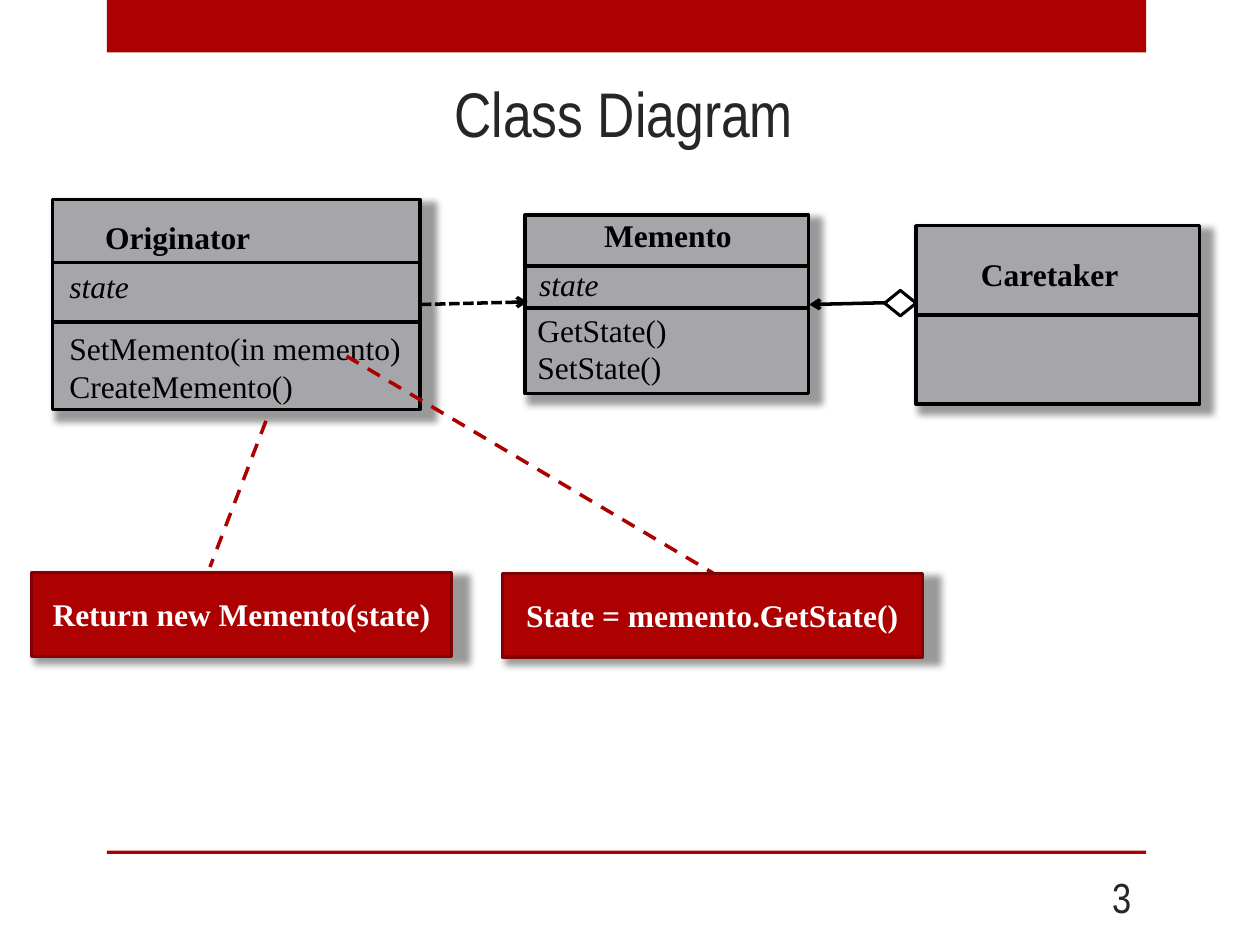
from dataclasses import dataclass

import lxml.etree
import pptx
import pptx.dml.color
import pptx.enum.dml
import pptx.enum.shapes
import pptx.enum.text
import pptx.oxml
import pptx.oxml.ns
import pptx.util

Pt = pptx.util.Pt
RGB = pptx.dml.color.RGBColor.from_string
SHAPE = pptx.enum.shapes.MSO_SHAPE
ALIGN = pptx.enum.text.PP_ALIGN
ANCHOR = pptx.enum.text.MSO_ANCHOR
DASH = pptx.enum.dml.MSO_LINE
qn = pptx.oxml.ns.qn


@dataclass(frozen=True)
class Theme:
    """Colours, fonts and sizes of the deck."""
    accent: str = "AD0101"
    accent_edge: str = "800101"
    panel: str = "A5A5AA"
    ink: str = "000000"
    heading: str = "262626"
    paper: str = "FFFFFF"
    head_font: str = "Arial Narrow"
    body_font: str = "Times New Roman"
    title_size: int = 36
    number_size: int = 24
    body_size: int = 18
    line: float = 2
    edge: float = 1.75


T = Theme()


def write(tf, text, size=T.body_size, font=T.body_font, color=T.ink,
          bold=False, italic=False, align=ALIGN.LEFT):
    """Set the text of a frame and format its runs."""
    tf.text = text
    for p in tf.paragraphs:
        p.alignment = align
        for r in p.runs:
            r.font.size, r.font.name = Pt(size), font
            r.font.bold, r.font.italic = bold, italic
            r.font.color.rgb = RGB(color)


def add_label(s, box, text, **style):
    """Place an unwrapped text box that grows with its text."""
    tf = s.shapes.add_textbox(*map(Pt, box)).text_frame
    tf.word_wrap = False
    tf.auto_size = pptx.enum.text.MSO_AUTO_SIZE.SHAPE_TO_FIT_TEXT
    write(tf, text, **style)


def add_block(s, box, fill=None, edge=None, width=T.line, kind=SHAPE.RECTANGLE):
    """Place a flat preset shape with optional fill and outline."""
    sp = s.shapes.add_shape(kind, *map(Pt, box))
    sp.shadow.inherit = False
    if fill:
        sp.fill.solid()
        sp.fill.fore_color.rgb = RGB(fill)
    else:
        sp.fill.background()
    if edge:
        sp.line.color.rgb = RGB(edge)
        sp.line.width = Pt(width)
    else:
        sp.line.fill.background()
    return sp


def add_shadow(sp):
    """Give a shape a soft shadow to the lower right."""
    effects = sp._element.spPr.find(qn("a:effectLst"))
    shadow = lxml.etree.SubElement(
        effects, qn("a:outerShdw"), blurRad=str(Pt(4)), dist=str(Pt(3)),
        dir="2700000", sx="103000", sy="103000", algn="tl", rotWithShape="0")
    color = lxml.etree.SubElement(shadow, qn("a:srgbClr"), val=T.ink)
    lxml.etree.SubElement(color, qn("a:alpha"), val="40000")


def add_line(s, start, end, color=T.ink, dash=None, arrow=False):
    """Draw a straight connector between two points."""
    c = s.shapes.add_connector(pptx.enum.shapes.MSO_CONNECTOR.STRAIGHT,
                               *map(Pt, start + end))
    c.line.color.rgb = RGB(color)
    c.line.width = Pt(T.line)
    if dash:
        c.line.dash_style = dash
    if arrow:
        lxml.etree.SubElement(c.line._get_or_add_ln(), qn("a:tailEnd"), type="arrow")
    lxml.etree.SubElement(c._element.spPr, qn("a:effectLst"))


def add_frame(s, box, title, number):
    """Place the title, the slide number and the top and bottom bars."""
    x, y, w, h = box
    add_block(s, (x, y, w, 30), T.accent)
    add_block(s, (x, y + 486, w, 2), T.accent)
    sp = s.shapes.title
    sp.left, sp.top, sp.width, sp.height = map(Pt, (x - 1.5, y + 38, w, 52))
    sp.text_frame.vertical_anchor = ANCHOR.MIDDLE
    write(sp.text_frame, title, T.title_size, T.head_font, T.heading, align=ALIGN.CENTER)
    tf = s.shapes.add_textbox(*map(Pt, (x + w - 61.5, y + 498, 60, 29))).text_frame
    tf.word_wrap = True
    tf.vertical_anchor = ANCHOR.MIDDLE
    write(tf, number, T.number_size, T.head_font, T.heading, align=ALIGN.RIGHT)


def add_class(s, box, dividers, labels):
    """Draw a class box with its dividers and labels, offset from its corner."""
    x, y, w, h = box
    add_shadow(add_block(s, box, T.panel, T.ink))
    for dy in dividers:
        add_line(s, (x, y + dy), (x + w, y + dy))
    for (dx, dy, lw, lh), text, style in labels:
        add_label(s, (x + dx, y + dy, lw, lh), text, **style)


def add_note(s, box, text):
    """Draw a code note."""
    sp = add_block(s, box, T.accent, T.accent_edge, T.edge)
    add_shadow(sp)
    tf = sp.text_frame
    tf.word_wrap = True
    tf.vertical_anchor = ANCHOR.MIDDLE
    write(tf, text, color=T.paper, bold=True, align=ALIGN.CENTER)


def add_relations(s, box):
    """Draw the links between classes and the aggregation diamond."""
    x, y, w, h = box
    add_line(s, (x, y + 8), (x + 61, y + 6.5), dash=DASH.SQUARE_DOT, arrow=True)
    add_line(s, (x + w - 18, y + 7), (x + 222, y + 8), arrow=True)
    add_block(s, (x + w - 18, y, 18, 14.5), None, T.ink, T.edge, SHAPE.DIAMOND)


def main():
    """Build the class diagram slide."""
    prs = pptx.Presentation()
    prs.slide_width, prs.slide_height = Pt(720), Pt(540)
    s = prs.slides.add_slide(prs.slide_layouts[5])
    name, field = {"bold": True}, {"italic": True}
    add_frame(s, (61, 0, 594, 540), "Class Diagram", "3")
    add_class(s, (30, 114, 210, 120), (36, 70), (
        ((23, 7, 99, 29), "Originator", name),
        ((2.5, 35, 49, 29), "state", field),
        ((2.5, 70.5, 206, 51), "SetMemento(in memento)\nCreateMemento()", {})))
    add_class(s, (300, 123, 162, 102), (29, 53), (
        ((37.5, -3, 88.5, 29), "Memento", {**name, "align": ALIGN.CENTER}),
        ((1, 25, 49, 29), "state", field),
        ((0, 51, 91, 51), "GetState()\nSetState()", {})))
    add_class(s, (523.5, 129, 162, 102), (51,), (
        ((30, 13, 94, 29), "Caretaker", name),))
    add_relations(s, (240.5, 166, 283, 14.5))
    add_line(s, (152, 240.5), (120, 324), T.accent, DASH.DASH)
    add_line(s, (198, 203.5), (407.5, 327.5), T.accent, DASH.DASH)
    add_note(s, (18, 327, 240, 48), "Return new Memento(state)")
    add_note(s, (287, 327.5, 240, 48), "State = memento.GetState()")
    prs.save("out.pptx")


if __name__ == "__main__":
    main()
